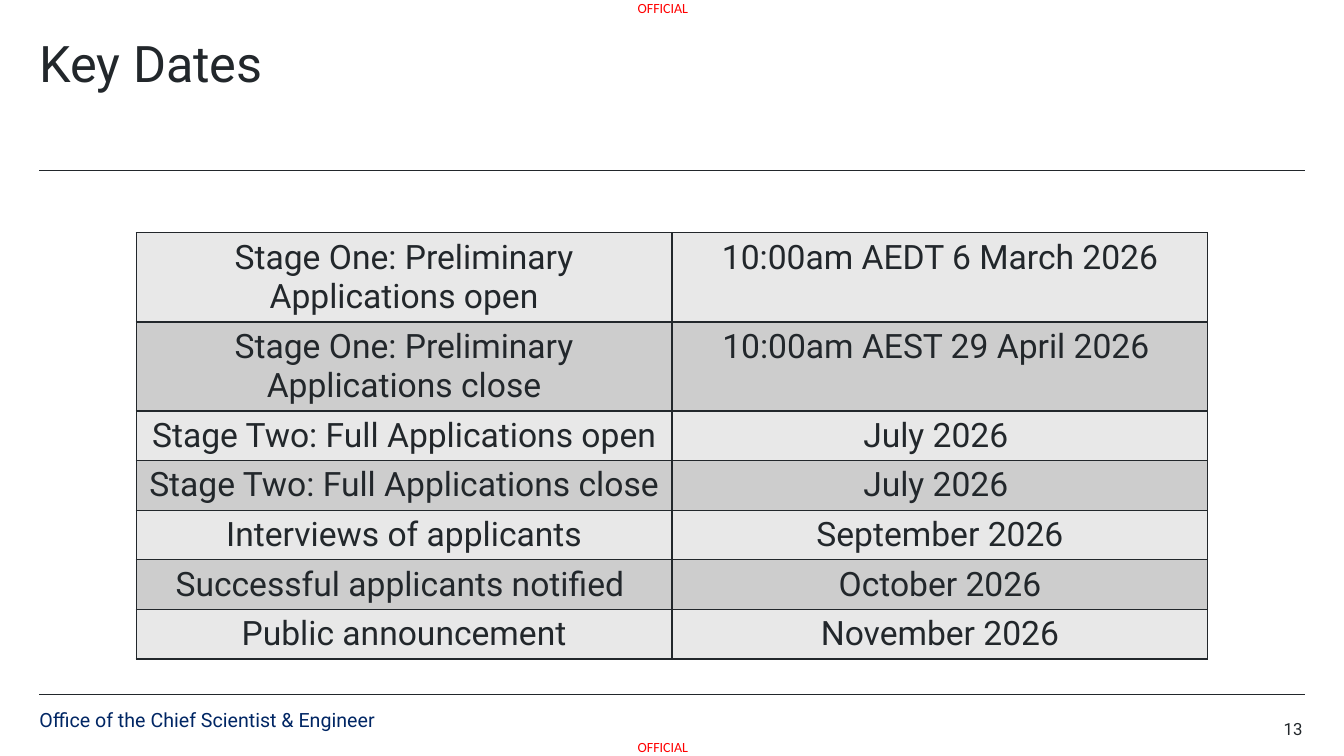
from dataclasses import dataclass

from lxml.etree import SubElement
from pptx import Presentation
from pptx.dml.color import RGBColor
from pptx.enum.shapes import MSO_CONNECTOR
from pptx.enum.text import MSO_ANCHOR, MSO_AUTO_SIZE, PP_ALIGN
from pptx.oxml.ns import qn
from pptx.util import Inches, Pt


@dataclass(frozen=True)
class Theme:
    font: str = "Roboto"
    marking_font: str = "Calibri"
    ink: str = "22272B"
    navy: str = "002664"
    red: str = "FF0000"
    bands: tuple = ("E8E8E8", "CDCDCD")
    title: int = 36
    table: int = 24
    footer: int = 14
    number: int = 12
    marking: int = 10


THEME = Theme()
LEFT, WIDTH = 0.39, 12.55

KEY_DATES = [
    ("Stage One: Preliminary Applications open", "10:00am AEDT 6 March 2026"),
    ("Stage One: Preliminary Applications close", "10:00am AEST 29 April 2026 "),
    ("Stage Two: Full Applications open", "July 2026 "),
    ("Stage Two: Full Applications close", "July 2026 "),
    ("Interviews of applicants", "September 2026"),
    ("Successful applicants notified ", "October 2026"),
    ("Public announcement", "November 2026"),
]


def style(p, size, color=THEME.ink, font=THEME.font, align=PP_ALIGN.LEFT):
    p.alignment = align
    p.font.size = Pt(size)
    p.font.name = font
    p.font.color.rgb = RGBColor.from_string(color)


def set_frame(tf, wrap=True):
    tf.margin_left = tf.margin_right = tf.margin_top = tf.margin_bottom = 0
    tf.word_wrap = wrap
    tf.auto_size = MSO_AUTO_SIZE.NONE
    tf.vertical_anchor = MSO_ANCHOR.TOP


def add_text(s, box, text, size, wrap=True, **look):
    tf = s.shapes.add_textbox(*map(Inches, box)).text_frame
    set_frame(tf, wrap)
    p = tf.paragraphs[0]
    p.text = text
    style(p, size, **look)
    return p


def add_marking(s, y):
    add_text(s, (6.31, y, 0.53, 0.17), "OFFICIAL", THEME.marking, wrap=False,
             color=THEME.red, font=THEME.marking_font, align=PP_ALIGN.CENTER)


def add_rule(s, x, y, w):
    line = s.shapes.add_connector(
        MSO_CONNECTOR.STRAIGHT, Inches(x), Inches(y), Inches(x + w), Inches(y))
    line.line.color.rgb = RGBColor.from_string(THEME.ink)
    line.line.width = Pt(0.5)
    SubElement(line._element.spPr, qn("a:effectLst"))


def add_title(s, x, y, w, h, text):
    title = s.shapes.title
    title.left, title.top, title.width, title.height = map(Inches, (x, y, w, h))
    tf = title.text_frame
    set_frame(tf)
    p = tf.paragraphs[0]
    p.text = text
    p.line_spacing = 0.9
    style(p, THEME.title)


def add_borders(cell):
    tc_pr = cell._tc.get_or_add_tcPr()
    for i, side in enumerate(("lnL", "lnR", "lnT", "lnB")):
        ln = tc_pr.makeelement(qn(f"a:{side}"), {"w": str(Pt(1))})
        fill = SubElement(ln, qn("a:solidFill"))
        SubElement(fill, qn("a:srgbClr"), val=THEME.ink)
        tc_pr.insert(i, ln)  # borders come before the fill


def add_dates_table(s, x, y, w, row_h, rows):
    frame = s.shapes.add_table(len(rows), 2, Inches(x), Inches(y),
                               Inches(w), Inches(row_h * len(rows)))
    table = frame.table
    table.first_row = table.horz_banding = False
    for i, row in enumerate(rows):
        for j, text in enumerate(row):
            cell = table.cell(i, j)
            cell.fill.solid()
            cell.fill.fore_color.rgb = RGBColor.from_string(THEME.bands[i % 2])
            add_borders(cell)
            p = cell.text_frame.paragraphs[0]
            p.text = text
            style(p, THEME.table, align=PP_ALIGN.CENTER)


def add_footer(s, x, y, w):
    add_rule(s, x, y, w)
    p = add_text(s, (x, y + 0.16, 7.35, 0.28),
                 "Office of the Chief Scientist & Engineer",
                 THEME.footer, color=THEME.navy)
    p.line_spacing = 0.9
    add_text(s, (x + w - 0.56, y + 0.24, 0.54, 0.2), "13",
             THEME.number, align=PP_ALIGN.RIGHT)


def build_key_dates(prs):
    s = prs.slides.add_slide(prs.slide_layouts[5])  # title only
    # Security markings at top and bottom
    for y in (0, 7.33):
        add_marking(s, y)
    # Heading
    add_title(s, LEFT, 0.39, 10.63, 1.1, "Key Dates")
    add_rule(s, LEFT, 1.69, WIDTH)
    # Dates
    add_dates_table(s, 1.35, 2.31, 10.63, 0.41, KEY_DATES)
    # Footer
    add_footer(s, LEFT, 6.89, WIDTH)


def main():
    prs = Presentation()
    prs.slide_width, prs.slide_height = Inches(13.33), Inches(7.5)
    build_key_dates(prs)
    prs.save("out.pptx")


if __name__ == "__main__":
    main()
